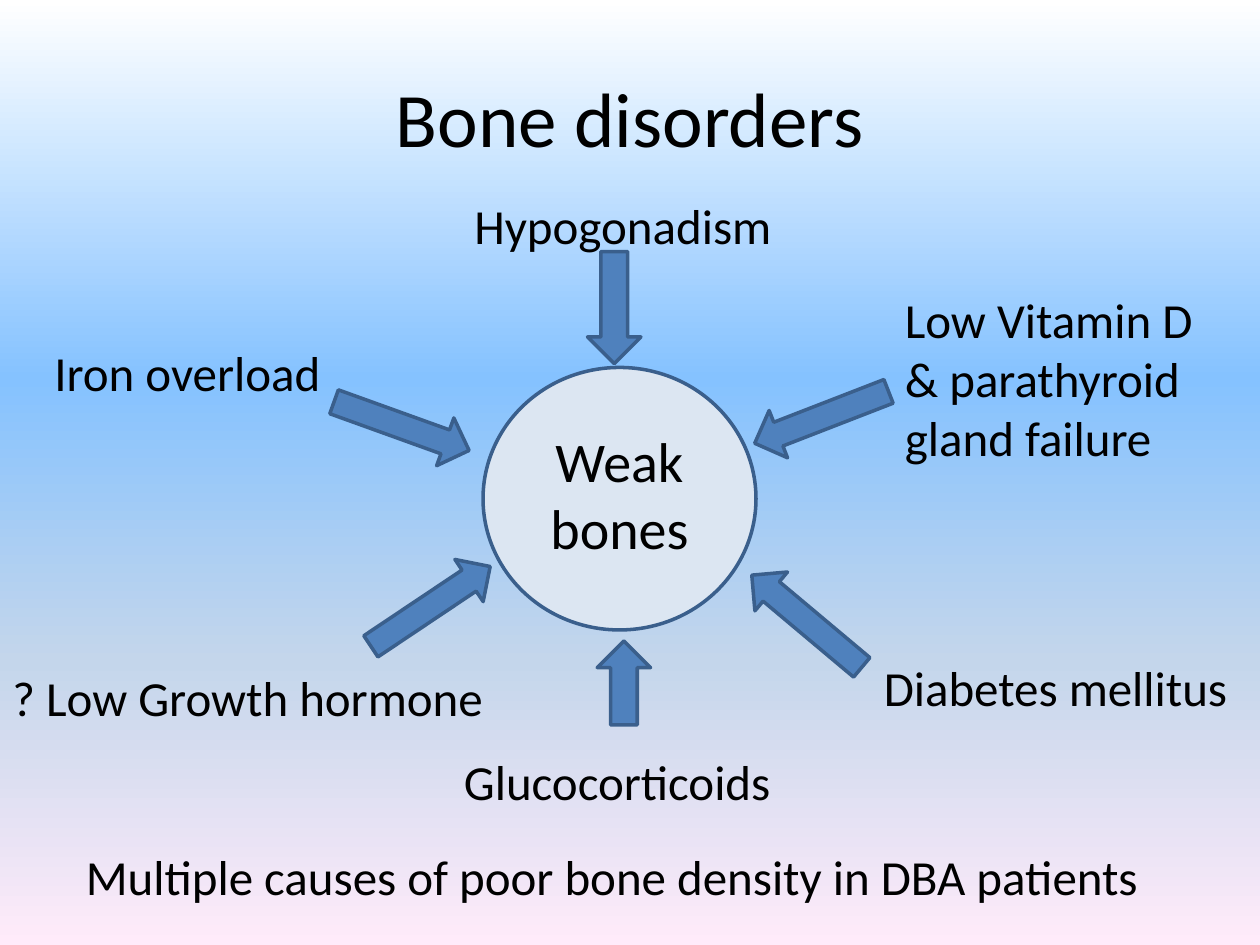
from copy import deepcopy

from lxml.etree import SubElement
from pptx import Presentation
from pptx.dml.color import RGBColor
from pptx.enum.shapes import MSO_SHAPE
from pptx.enum.text import MSO_ANCHOR, PP_ALIGN
from pptx.oxml.ns import qn
from pptx.util import Pt

BLACK = RGBColor(0x00, 0x00, 0x00)
PALE_BLUE = RGBColor(0xDC, 0xE6, 0xF2)
BLUE = RGBColor(0x4F, 0x81, 0xBD)
DARK_BLUE = RGBColor(0x3A, 0x5F, 0x8C)
SKY = [
    (0, RGBColor(0xFF, 0xFF, 0xFF)),
    (40, RGBColor(0x85, 0xC2, 0xFF)),
    (70, RGBColor(0xC4, 0xD6, 0xEB)),
    (100, RGBColor(0xFF, 0xEB, 0xFA)),
]

# Cause, label box and arrow box relative to the diagram, arrow rotation
CAUSES = [
    ("Hypogonadism", (264, 0, 186, 41), (319, 52.5, 64, 30.5), 270),
    ("Low Vitamin D & parathyroid gland failure",
     (510, 54, 186, 109), (428.5, 116, 82, 29), 338.8),
    ("Diabetes mellitus", (498, 264, 222, 41), (420, 232.5, 82, 29), 40),
    ("Glucocorticoids", (258, 318, 204, 41), (332.5, 267, 48, 30.5), 90),
    ("? Low Growth hormone", (0, 270, 294, 41), (205, 224, 82, 29), 146.2),
    ("Iron overload", (24, 84, 186, 41), (188.5, 121, 82, 29), 199.8),
]


def paint_background(slide):
    fill = slide.background.fill
    fill.gradient()
    fill.gradient_angle = 270
    stop_list = slide.element.find(".//" + qn("a:gsLst"))
    template = deepcopy(stop_list[0])
    for stop in list(stop_list):
        stop_list.remove(stop)
    for position, color in SKY:
        stop = deepcopy(template)
        stop.set("pos", str(position * 1000))
        for child in list(stop):
            stop.remove(child)
        SubElement(stop, qn("a:srgbClr")).set("val", str(color))
        stop_list.append(stop)


def add_label(slide, box, text, size=28, align=PP_ALIGN.LEFT, anchor=MSO_ANCHOR.TOP):
    frame = slide.shapes.add_textbox(*map(Pt, box)).text_frame
    frame.word_wrap = True
    frame.vertical_anchor = anchor
    paragraph = frame.paragraphs[0]
    paragraph.alignment = align
    run = paragraph.add_run()
    run.text = text
    run.font.name = "Calibri"
    run.font.size = Pt(size)
    run.font.color.rgb = BLACK


def add_outlined(slide, kind, box, color, rotation=0):
    shape = slide.shapes.add_shape(kind, *map(Pt, box))
    shape.rotation = rotation
    shape.shadow.inherit = False
    shape.fill.solid()
    shape.fill.fore_color.rgb = color
    shape.line.color.rgb = DARK_BLUE
    shape.line.width = Pt(2)


def add_diagram(slide, left, top):
    def place(box):
        x, y, width, height = box
        return left + x, top + y, width, height

    # Central circle
    add_outlined(slide, MSO_SHAPE.OVAL, place((276, 102, 156, 150)), PALE_BLUE)
    add_label(slide, place((306, 132, 96, 85)), "Weak bones", 32, PP_ALIGN.CENTER)

    # Causes pointing at the circle
    for cause, label_box, arrow_box, rotation in CAUSES:
        add_outlined(slide, MSO_SHAPE.LEFT_ARROW, place(arrow_box), BLUE, rotation)
        add_label(slide, place(label_box), cause)


def main():
    presentation = Presentation()
    presentation.slide_width = Pt(720)
    presentation.slide_height = Pt(540)
    slide = presentation.slides.add_slide(presentation.slide_layouts[6])

    paint_background(slide)
    # Title
    add_label(slide, (36, 21.6, 648, 90), "Bone disorders", 44,
              PP_ALIGN.CENTER, MSO_ANCHOR.MIDDLE)
    add_diagram(slide, 0, 108)
    # Conclusion
    add_label(slide, (42, 480, 618, 41),
              "Multiple causes of poor bone density in DBA patients")
    presentation.save("out.pptx")


if __name__ == "__main__":
    main()
